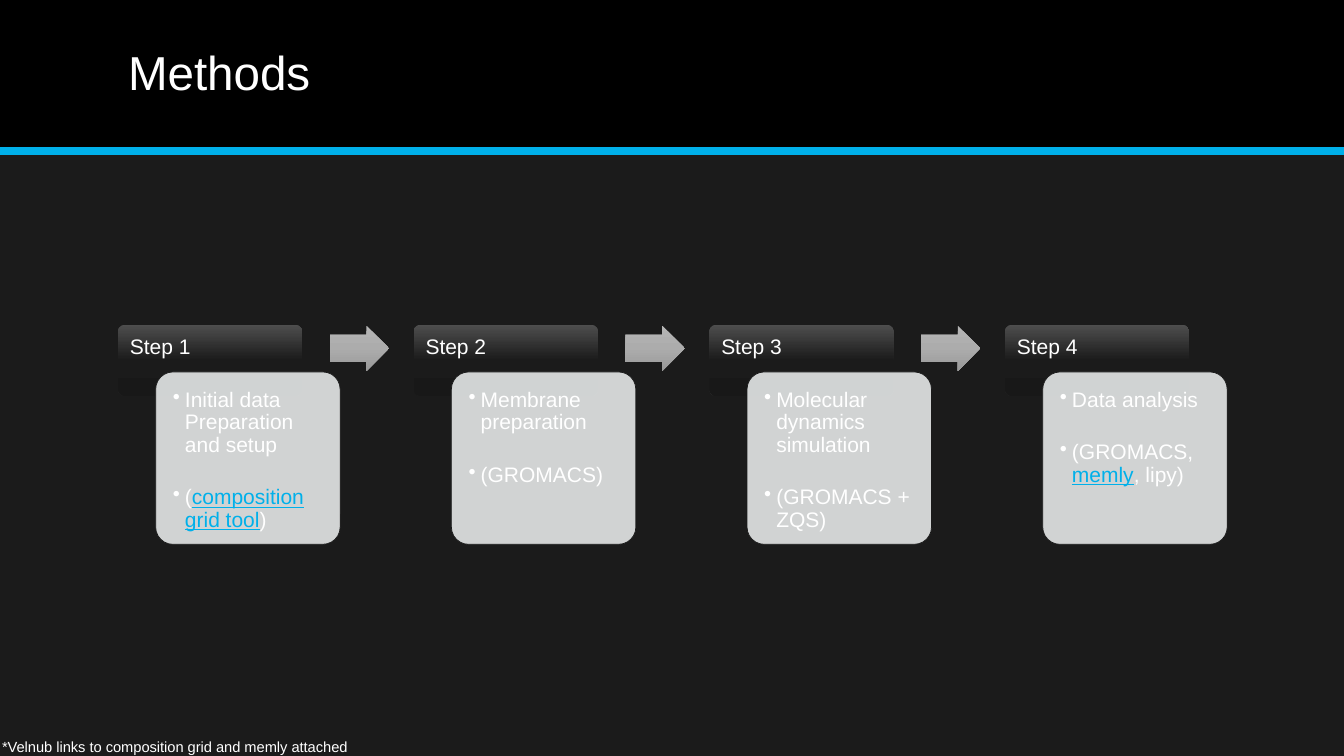
from copy import deepcopy

from lxml.etree import SubElement
from pptx import Presentation
from pptx.dml.color import RGBColor
from pptx.enum.shapes import MSO_CONNECTOR, MSO_SHAPE
from pptx.enum.text import MSO_ANCHOR, PP_ALIGN
from pptx.oxml.ns import qn
from pptx.util import Inches, Pt

FONT = "Arial"
COLORS = {"background": "1B1B1B", "band": "000000", "accent": "00B0EA",
          "text": "FFFFFF", "card": "E5E8E8"}
HEADER_FADE = ["4E4E4E", "1B1B1B", "181818"]
ARROW_FADE = ["B5B5B5", "ACACAC", "999999"]

# Each step lists its task, then the tool line as (text, looks like a link)
STEPS = [
    ("Initial data Preparation and setup",
     [("(", False), ("composition grid tool", True), (")", False)]),
    ("Membrane preparation", [("(GROMACS)", False)]),
    ("Molecular dynamics simulation", [("(GROMACS + ZQS)", False)]),
    ("Data analysis",
     [("(GROMACS, ", False), ("memly", True), (", lipy)", False)]),
]


def style_run(run, size, color="text"):
    run.font.name = FONT
    run.font.size = Pt(size)
    run.font.color.rgb = RGBColor.from_string(COLORS[color])


def fade_shape(kind, left, top, width, height, fade):
    """Add a borderless shape with a three-stop fade from top to bottom."""
    shape = slide.shapes.add_shape(kind, left, top, width, height)
    shape.shadow.inherit = False
    shape.line.fill.background()
    shape.fill.gradient()
    shape.fill.gradient_angle = 270
    stop_list = shape._element.spPr.find(".//" + qn("a:gsLst"))
    stop_list.append(deepcopy(stop_list[-1]))
    for stop, position, color in zip(shape.fill.gradient_stops, (0, 0.5, 1), fade):
        stop.position = position
        stop.color.rgb = RGBColor.from_string(color)
    return shape


deck = Presentation()
deck.slide_width, deck.slide_height = Inches(13.333), Inches(7.5)
W, H = deck.slide_width, deck.slide_height
slide = deck.slides.add_slide(deck.slide_layouts[5])
slide.background.fill.solid()
slide.background.fill.fore_color.rgb = RGBColor.from_string(COLORS["background"])

# Title band with accent rule
band_height = int(H * 0.2)
band = slide.shapes.add_shape(MSO_SHAPE.RECTANGLE, 0, 0, W, band_height)
band.shadow.inherit = False
band.fill.solid()
band.fill.fore_color.rgb = RGBColor.from_string(COLORS["band"])
band.line.fill.background()
rule = slide.shapes.add_connector(MSO_CONNECTOR.STRAIGHT, 0, band_height, W, band_height)
rule.line.color.rgb = RGBColor.from_string(COLORS["accent"])
rule.line.width = Pt(6)
SubElement(rule._element.spPr, qn("a:effectLst"))

# Title, brought in front of the band
title = slide.shapes.title
title.left, title.top = Inches(1.17), Inches(0.14)
title.width, title.height = Inches(11), Inches(1.2)
title.text_frame.text = "Methods"
title.text_frame.vertical_anchor = MSO_ANCHOR.MIDDLE
title.text_frame.paragraphs[0].alignment = PP_ALIGN.LEFT
title.text_frame.paragraphs[0].line_spacing = 0.9
style_run(title.text_frame.paragraphs[0].runs[0], 34)
slide.shapes._spTree.append(title._element)

# Four step columns
first_left, column_pitch = Inches(1.17), int(W * 0.22)
step_top, step_width = Inches(3.22), Inches(1.83)
card_shift, card_top = Inches(0.375), Inches(3.69)
arrow_shift = Inches(2.1)

for column, (task, tools) in enumerate(STEPS):
    left = first_left + column * column_pitch

    # Step header
    header = fade_shape(MSO_SHAPE.ROUNDED_RECTANGLE, left, step_top,
                        step_width, Inches(0.71), HEADER_FADE)
    header.adjustments[0] = 0.1
    label = header.text_frame
    label.vertical_anchor = MSO_ANCHOR.TOP
    label.margin_left = label.margin_top = Inches(0.1)
    label.text = f"Step {column + 1}"
    label.paragraphs[0].alignment = PP_ALIGN.LEFT
    label.paragraphs[0].line_spacing = 0.9
    style_run(label.paragraphs[0].runs[0], 15)

    # Translucent card
    card = slide.shapes.add_shape(MSO_SHAPE.ROUNDED_RECTANGLE, left + card_shift,
                                  card_top, step_width, Inches(1.71))
    card.shadow.inherit = False
    card.adjustments[0] = 0.1
    card.fill.solid()
    card.fill.fore_color.rgb = RGBColor.from_string(COLORS["card"])
    card_color = card._element.spPr.find(qn("a:solidFill"))[0]
    SubElement(card_color, qn("a:alpha"), val="90000")
    card.line.color.rgb = RGBColor.from_string(COLORS["background"])
    card.line.width = Pt(0.5)

    # Task and tool bullets
    details = card.text_frame
    details.word_wrap = True
    details.vertical_anchor = MSO_ANCHOR.TOP
    details.margin_left = details.margin_right = Inches(0.12)
    details.margin_top = details.margin_bottom = Inches(0.12)
    task_line, tool_line = details.paragraphs[0], details.add_paragraph()
    for bullet, pieces in ((task_line, [(task, False)]), (tool_line, tools)):
        bullet.alignment = PP_ALIGN.LEFT
        bullet.line_spacing = 0.9
        for text, is_link in pieces:
            run = bullet.add_run()
            run.text = text
            style_run(run, 15, "accent" if is_link else "text")
            run.font.underline = is_link
        properties = bullet._p.get_or_add_pPr()
        properties.set("marL", str(Inches(0.12)))
        properties.set("indent", str(-Inches(0.12)))
        SubElement(properties, qn("a:buChar"), char="•")
    task_line.space_after = Pt(21)

    # Arrow to the next step
    if column < len(STEPS) - 1:
        arrow = fade_shape(MSO_SHAPE.RIGHT_ARROW, left + arrow_shift, Inches(3.23),
                           Inches(0.59), Inches(0.45), ARROW_FADE)
        arrow.adjustments[0] = 0.6
        arrow.adjustments[1] = 0.5

# Footnote
footnote = slide.shapes.add_textbox(0, Inches(7.32), int(W * 0.5), Inches(0.18)).text_frame
footnote.word_wrap = True
footnote.margin_left = Inches(0.02)
footnote.margin_top = footnote.margin_bottom = 0
footnote.text = "*Velnub links to composition grid and memly attached"
style_run(footnote.paragraphs[0].runs[0], 10.5)

deck.save("out.pptx")
